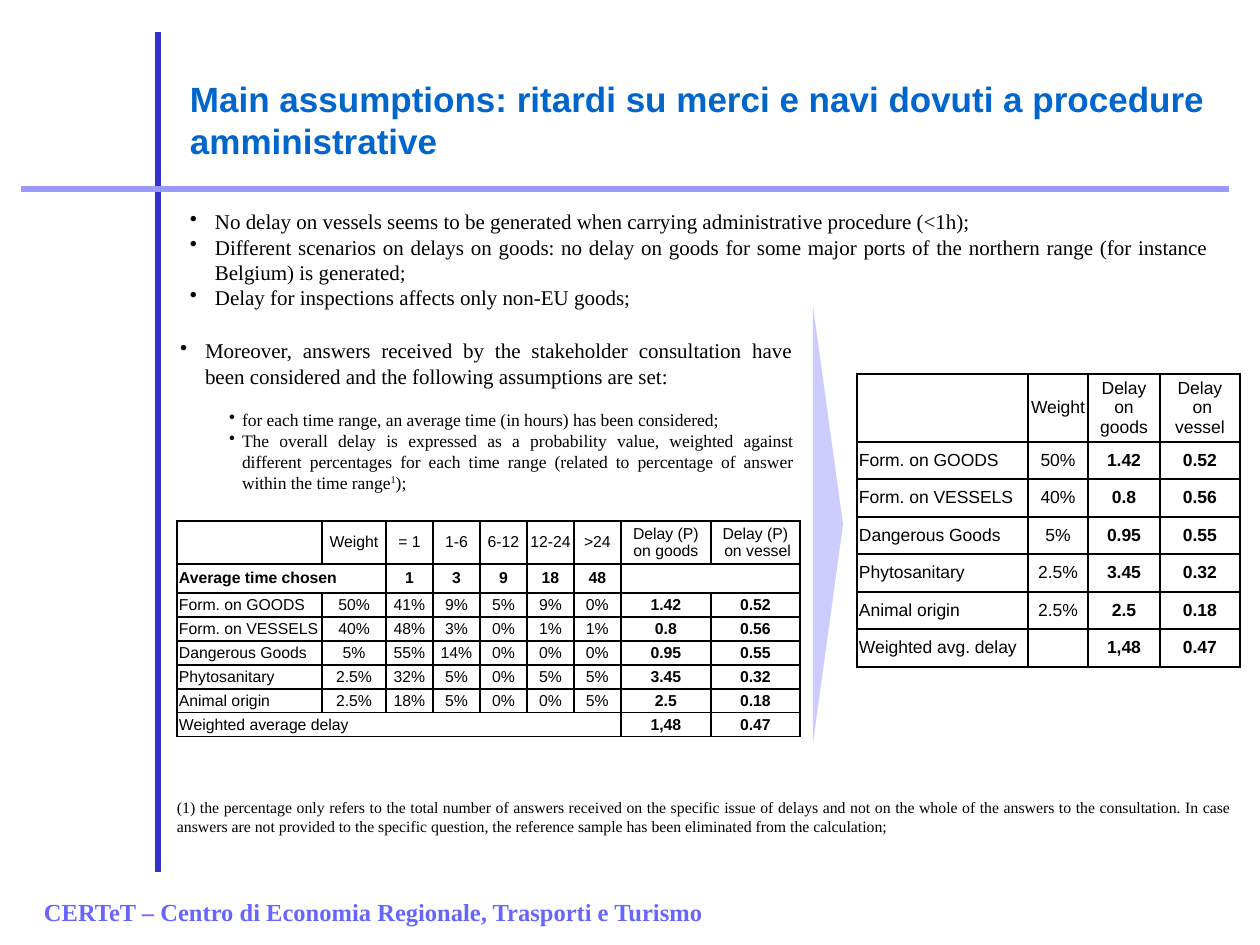
from dataclasses import dataclass

from lxml import etree
from pptx import Presentation
from pptx import util as u
from pptx.dml.color import RGBColor
from pptx.enum import shapes, text
from pptx.oxml.ns import qn

EMU_PER_PX = 914400 / 126
BLACK = RGBColor(0, 0, 0)
WHITE = RGBColor(0xFF, 0xFF, 0xFF)
NAVY = RGBColor(0x33, 0x33, 0xCC)
PERIWINKLE = RGBColor(0x99, 0x99, 0xFF)
LAVENDER = RGBColor(0xCC, 0xCC, 0xFF)
VIOLET = RGBColor(0x66, 0x66, 0xFF)
TITLE_BLUE = RGBColor(0, 0x66, 0xCC)
SANS = "Arial"
SERIF = "Times New Roman"
NO_GRID_STYLE = "{2D5ABB26-0587-4C30-8999-92F81FD0307C}"
LEFT, CENTER, JUSTIFY = text.PP_ALIGN.LEFT, text.PP_ALIGN.CENTER, text.PP_ALIGN.JUSTIFY


@dataclass
class Para:
    words: str
    size: int
    margin: int = 0
    hanging: int = 0
    level: int = 0
    before: float = 0
    superscript: str = ""
    ending: str = ""


@dataclass
class Block:
    bounds: tuple[int, int, int, int]
    paras: list[Para]
    insets: tuple[int, int] = (0, 0)
    font: str = SERIF
    color: RGBColor = BLACK
    bold: bool = False
    align: text.PP_ALIGN = JUSTIFY


@dataclass
class Grid:
    """Cells set to None belong to the cell on their left."""
    left: int
    top: int
    columns: list[int]
    rows: list[int]
    cells: list[list[str | None]]
    size: int
    bold_row: int | None = None
    open_pair: tuple[int, int] | None = None


BLOCKS = [
    Block((31, 872, 1008, 63),
          [Para("CERTeT – Centro di Economia Regionale, Trasporti e Turismo", 14)],
          (13, 25), color=VIOLET, bold=True, align=LEFT),
    Block((178, 69, 1043, 97),
          [Para("Main assumptions: ritardi su merci e navi dovuti a procedure amministrative", 20)],
          (12, 8), SANS, TITLE_BLUE, True, LEFT),
    Block((178, 207, 1043, 129), [
        Para(words, 12, 25, 25) for words in (
            "No delay on vessels seems to be generated when carrying administrative procedure (<1h);",
            "Different scenarios on delays on goods: no delay on goods for some major ports of the "
            "northern range (for instance Belgium) is generated;",
            "Delay for inspections affects only non-EU goods;",
        )], (12, 2)),
    Block((168, 335, 625, 160), [
        Para("Moreover, answers received by the stakeholder consultation have been considered "
             "and the following assumptions are set:", 12, 37, 25),
        Para("for each time range, an average time (in hours) has been considered;",
             10, 74, 13, 1, 11.5),
        Para("The overall delay is expressed as a probability value, weighted against different "
             "percentages for each time range (related to percentage of answer within the time range",
             10, 74, 13, 1, superscript="1", ending=");"),
    ], (0, 3)),
    Block((177, 798, 1053, 38), [
        Para("(1) the percentage only refers to the total number of answers received on the specific "
             "issue of delays and not on the whole of the answers to the consultation. In case answers "
             "are not provided to the specific question, the reference sample has been eliminated "
             "from the calculation;", 9)]),
]

ANSWERS = [
    ["Form. on GOODS", "50%", "41%", "9%", "5%", "9%", "0%", "1.42", "0.52"],
    ["Form. on VESSELS", "40%", "48%", "3%", "0%", "1%", "1%", "0.8", "0.56"],
    ["Dangerous Goods", "5%", "55%", "14%", "0%", "0%", "0%", "0.95", "0.55"],
    ["Phytosanitary", "2.5%", "32%", "5%", "0%", "5%", "5%", "3.45", "0.32"],
    ["Animal origin", "2.5%", "18%", "5%", "0%", "0%", "5%", "2.5", "0.18"],
]
AVERAGES = ["1,48", "0.47"]

TIME_RANGES = Grid(
    177, 521, [145, 64] + [47] * 5 + [90, 89], [43, 29] + [24] * 6,
    [["", "Weight", "= 1", "1-6", "6-12", "12-24", ">24",
      "Delay (P)\non goods", "Delay (P)\n on vessel"],
     ["Average time chosen", None, "1", "3", "9", "18", "48", "", ""],
     *ANSWERS,
     ["Weighted average delay"] + [None] * 6 + AVERAGES],
    9, bold_row=1, open_pair=(1, 7))

SUMMARY = Grid(
    857, 374, [171, 60, 72, 80], [68] + [37, 38] * 3,
    [["", "Weight", "Delay\non goods", "Delay\n on vessel"],
     *[row[:2] + row[-2:] for row in ANSWERS],
     ["Weighted avg. delay", "", *AVERAGES]],
    10)


def px(length: int) -> u.Emu:
    return u.Emu(round(length * EMU_PER_PX))


def style(font, name: str, size: int, color: RGBColor, bold: bool) -> None:
    font.name, font.size, font.bold = name, u.Pt(size), bold
    font.color.rgb = color


def draw_line(page, start: tuple[int, int], end: tuple[int, int], color: RGBColor) -> None:
    line = page.shapes.add_connector(
        shapes.MSO_CONNECTOR.STRAIGHT, *map(px, start + end))
    line.line.color.rgb = color
    line.line.width = u.Pt(3)
    etree.SubElement(line._element.spPr, qn("a:effectLst"))


def draw_block(page, block: Block) -> None:
    frame = page.shapes.add_textbox(*map(px, block.bounds)).text_frame
    frame.word_wrap = True
    frame.margin_left = frame.margin_right = px(block.insets[0])
    frame.margin_top, frame.margin_bottom = px(block.insets[1]), 0
    frame.text = "\n".join(item.words for item in block.paras)
    for para, item in zip(frame.paragraphs, block.paras):
        para.alignment, para.level = block.align, item.level
        if item.hanging:
            properties = para._p.get_or_add_pPr()
            properties.set("marL", str(px(item.margin)))
            properties.set("indent", str(-px(item.hanging)))
            etree.SubElement(properties, qn("a:buChar")).set("char", "•")
        if item.before:
            para.space_before = u.Pt(item.before)
        if item.superscript:
            span = para.add_run()
            span.text = item.superscript
            span._r.get_or_add_rPr().set("baseline", "30000")
            para.add_run().text = item.ending
        for span in para.runs:
            style(span.font, block.font, item.size, block.color, block.bold)


def draw_borders(cell, sides: str) -> None:
    for side in sides:
        edge = etree.SubElement(cell._tc.get_or_add_tcPr(), qn(f"a:ln{side}"), w=str(u.Pt(1)))
        fill = etree.SubElement(edge, qn("a:solidFill"))
        etree.SubElement(fill, qn("a:srgbClr")).set("val", str(BLACK))


def fill_cell(cell, words: str, size: int, bold: bool, align: text.PP_ALIGN) -> None:
    cell.vertical_anchor = text.MSO_ANCHOR.MIDDLE
    cell.margin_left = cell.margin_right = cell.margin_top = cell.margin_bottom = px(2)
    cell.text_frame.text = words
    for para in cell.text_frame.paragraphs:
        para.alignment = align
        for span in para.runs:
            style(span.font, SANS, size, BLACK, bold)
        if not para.runs:
            etree.SubElement(para._p, qn("a:endParaRPr")).set("sz", str(size * 100))


def draw_grid(page, grid: Grid) -> None:
    table = page.shapes.add_table(
        len(grid.rows), len(grid.columns), px(grid.left), px(grid.top),
        px(sum(grid.columns)), px(sum(grid.rows))).table
    table.first_row = table.horz_banding = False
    table._tbl.tblPr.find(qn("a:tableStyleId")).text = NO_GRID_STYLE
    for column, width in zip(table.columns, grid.columns):
        column.width = px(width)
    for row, height in zip(table.rows, grid.rows):
        row.height = px(height)
    first_delay = len(grid.columns) - 2
    for r, row in enumerate(grid.cells):
        if None in row:
            table.cell(r, 0).merge(table.cell(r, row.count(None)))
        for c, words in enumerate(row):
            cell = table.cell(r, c)
            sides = "LRTB"
            if grid.open_pair == (r, c):
                sides = "LTB"
            elif grid.open_pair == (r, c - 1):
                sides = "RTB"
            draw_borders(cell, sides)
            if r == 0 and c > 1:
                cell.fill.solid()
                cell.fill.fore_color.rgb = WHITE
            else:
                cell.fill.background()
            bold = r == grid.bold_row or (r > 0 and c >= first_delay)
            fill_cell(cell, words or "", grid.size, bold, CENTER if c else LEFT)


def draw_arrow(page) -> None:
    arrow = page.shapes.add_shape(
        shapes.MSO_SHAPE.PENTAGON, px(813), px(306), px(30), px(437))
    arrow.adjustments[0] = 1
    arrow.shadow.inherit = False
    arrow.fill.solid()
    arrow.fill.fore_color.rgb = LAVENDER
    arrow.line.fill.background()


def main() -> None:
    deck = Presentation()
    deck.slide_width, deck.slide_height = px(1260), px(945)
    page = deck.slides.add_slide(deck.slide_layouts[6])
    draw_line(page, (158, 32), (158, 872), NAVY)
    draw_line(page, (21, 189), (1229, 189), PERIWINKLE)
    for block in BLOCKS:
        draw_block(page, block)
    for grid in (TIME_RANGES, SUMMARY):
        draw_grid(page, grid)
    draw_arrow(page)
    deck.save("out.pptx")


if __name__ == "__main__":
    main()
